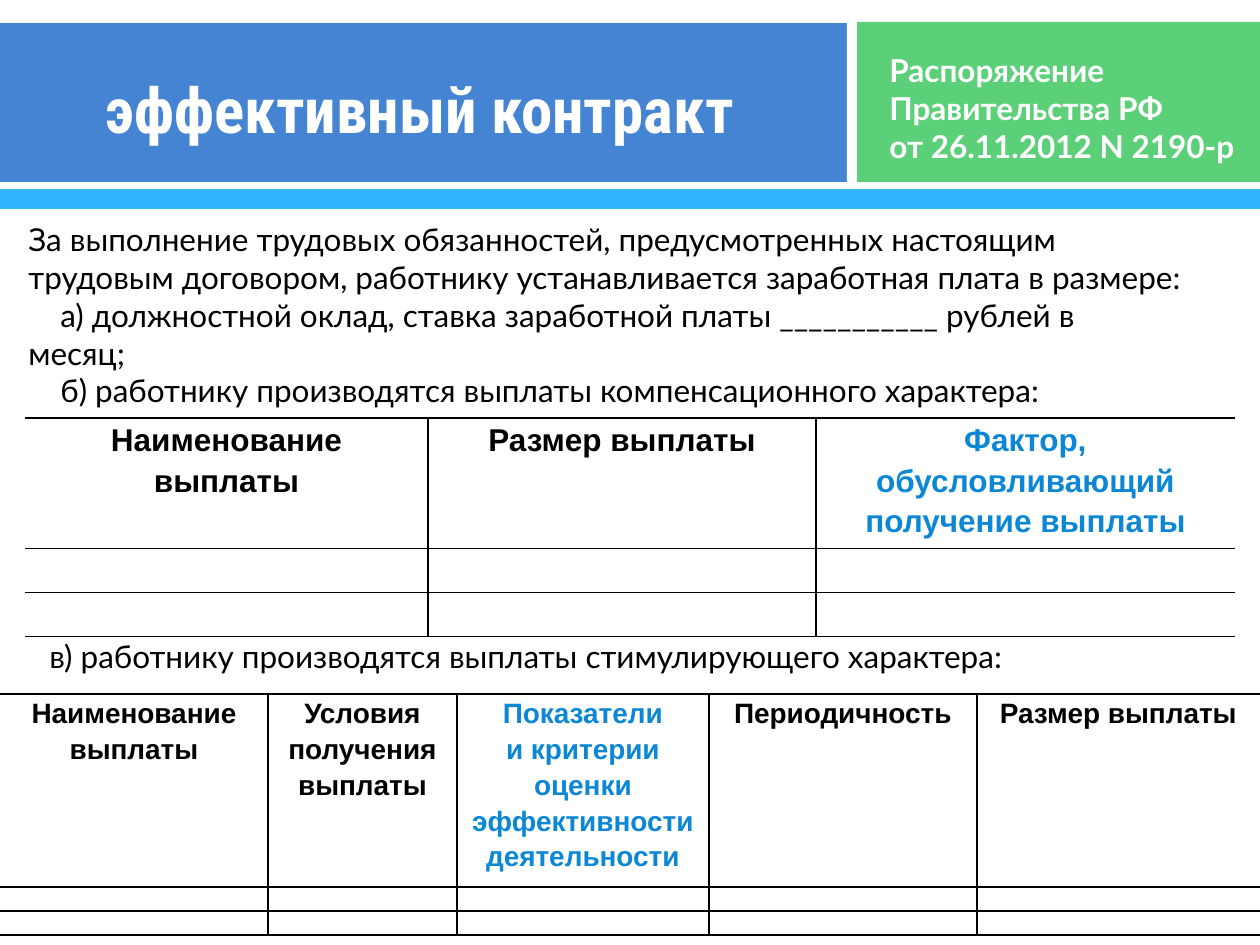
from lxml import etree
from pptx import Presentation
from pptx.dml.color import RGBColor
from pptx.enum import shapes, text
from pptx.oxml.ns import qn
from pptx.util import Emu, Pt

PX = 914400 // 126
BLACK, WHITE, ACCENT = "000000", "FFFFFF", "0B87D6"

# Content
TITLE = "эффективный контракт"
BANDS = [  # left, top, width, height, colour
    (0, 23, 1260, 159, "4584D3"),
    (0, 189, 1260, 20, "31B6FD"),
    (851, 22, 409, 160, "5BD078"),
    (847, 19, 10, 167, WHITE),
]
LATO = {"name": "Lato", "size": Pt(18)}
NOTES = [  # box, colour, bold, paragraphs as (first-line indent, text)
    ((16, 214, 1211, 204), BLACK, False, [
        (0, "За выполнение трудовых обязанностей, предусмотренных настоящим"),
        (0, "трудовым договором, работнику устанавливается заработная плата в размере:"),
        (32, "а) должностной оклад, ставка заработной платы ___________ рублей в"),
        (0, "месяц;"),
        (32, "б) работнику производятся выплаты компенсационного характера:"),
    ]),
    ((29, 631, 1187, 50), BLACK, False, [
        (8, "в) работнику производятся выплаты стимулирующего характера:"),
    ]),
    ((877, 45, 383, 127), WHITE, True, [
        (0, "Распоряжение Правительства РФ"),
        (0, "от 26.11.2012 N 2190-р"),
    ]),
]
TABLES = [  # \v marks a line break inside a heading
    {"origin": (25, 418), "columns": [403, 388, 419], "rows": [130, 44, 44],
     "size": 18, "empty_size": 18, "accent": 2,
     "headings": ["Наименование\vвыплаты", "Размер выплаты",
                  "Фактор,\vобусловливающий\vполучение выплаты"]},
    {"origin": (0, 694), "columns": [268, 189, 252, 268, 283], "rows": [193, 24, 24],
     "size": 16, "empty_size": 10, "accent": 2,
     "headings": ["Наименование\vвыплаты", "Условия\vполучения\vвыплаты",
                  "Показатели\vи критерии\vоценки\vэффективности\vдеятельности",
                  "Периодичность", "Размер выплаты"]},
]


def px(*values):
    return [Emu(value * PX) for value in values]


def rgb(value):
    return RGBColor.from_string(value)


def apply(target, values):
    for name, value in values.items():
        setattr(target, name, value)


def style_font(font, colour, **values):
    apply(font, values)
    font.color.rgb = rgb(colour)


def add_band(slide, left, top, width, height, colour):
    shape = slide.shapes.add_shape(
        shapes.MSO_SHAPE.RECTANGLE, *px(left, top, width, height))
    shape.shadow.inherit = False
    shape.fill.solid()
    shape.fill.fore_color.rgb = rgb(colour)
    shape.line.fill.background()


def add_note(slide, box, colour, bold, lines):
    frame = slide.shapes.add_textbox(*px(*box)).text_frame
    frame.word_wrap = True
    for index, (indent, line) in enumerate(lines):
        paragraph = frame.add_paragraph() if index else frame.paragraphs[0]
        paragraph.text = line
        style_font(paragraph.runs[0].font, colour, bold=bold, **LATO)
        if indent:
            paragraph._p.get_or_add_pPr().set("indent", str(indent * PX))


def set_borders(cell, first, last):
    """Rule every side except the outer left and right edges."""
    properties = cell._tc.get_or_add_tcPr()
    sides = {"lnL": not first, "lnR": not last, "lnT": True, "lnB": True}
    for index, (side, visible) in enumerate(sides.items()):
        line = etree.Element(qn("a:" + side), w=str(Pt(1)))
        fill = etree.SubElement(line, qn("a:solidFill" if visible else "a:noFill"))
        if visible:
            etree.SubElement(fill, qn("a:srgbClr"), val=BLACK)
        properties.insert(index, line)


def add_table(slide, data):
    columns, rows = data["columns"], data["rows"]
    table = slide.shapes.add_table(
        len(rows), len(columns), *px(*data["origin"], sum(columns), sum(rows))).table
    for column, width in zip(table.columns, px(*columns)):
        column.width = width
    for row, height in zip(table.rows, px(*rows)):
        row.height = height
    for row_index, row in enumerate(table.rows):
        for index, cell in enumerate(row.cells):
            apply(cell, {"margin_left": Pt(3.6), "margin_right": Pt(3.6),
                         "margin_top": 0, "margin_bottom": 0})
            cell.fill.background()
            set_borders(cell, index == 0, index == len(columns) - 1)
            paragraph = cell.text_frame.paragraphs[0]
            if row_index:
                paragraph.font.size = Pt(data["empty_size"])
                continue
            paragraph.text = data["headings"][index]
            apply(paragraph, {"alignment": text.PP_ALIGN.CENTER, "line_spacing": 1.15})
            colour = ACCENT if index == data["accent"] else BLACK
            for run in paragraph.runs:
                style_font(run.font, colour, name="Arial", size=Pt(data["size"]), bold=True)


def main():
    presentation = Presentation()
    apply(presentation, dict(zip(("slide_width", "slide_height"), px(1260, 945))))
    slide = presentation.slides.add_slide(presentation.slide_layouts[5])

    # Header bands, kept behind the title
    for band in BANDS:
        add_band(slide, *band)
    title = slide.shapes.title
    slide.shapes._spTree.append(title._element)
    apply(title, dict(zip(("left", "top", "width", "height"), px(0, 29, 840, 159))))
    title.text_frame.text = TITLE
    title.text_frame.vertical_anchor = text.MSO_ANCHOR.MIDDLE
    paragraph = title.text_frame.paragraphs[0]
    paragraph.alignment = text.PP_ALIGN.CENTER
    style_font(paragraph.runs[0].font, WHITE,
               name="Roboto Condensed", size=Pt(36), bold=True)

    # Clauses and payment tables
    for note in NOTES:
        add_note(slide, *note)
    for data in TABLES:
        add_table(slide, data)
    presentation.save("out.pptx")


if __name__ == "__main__":
    main()
